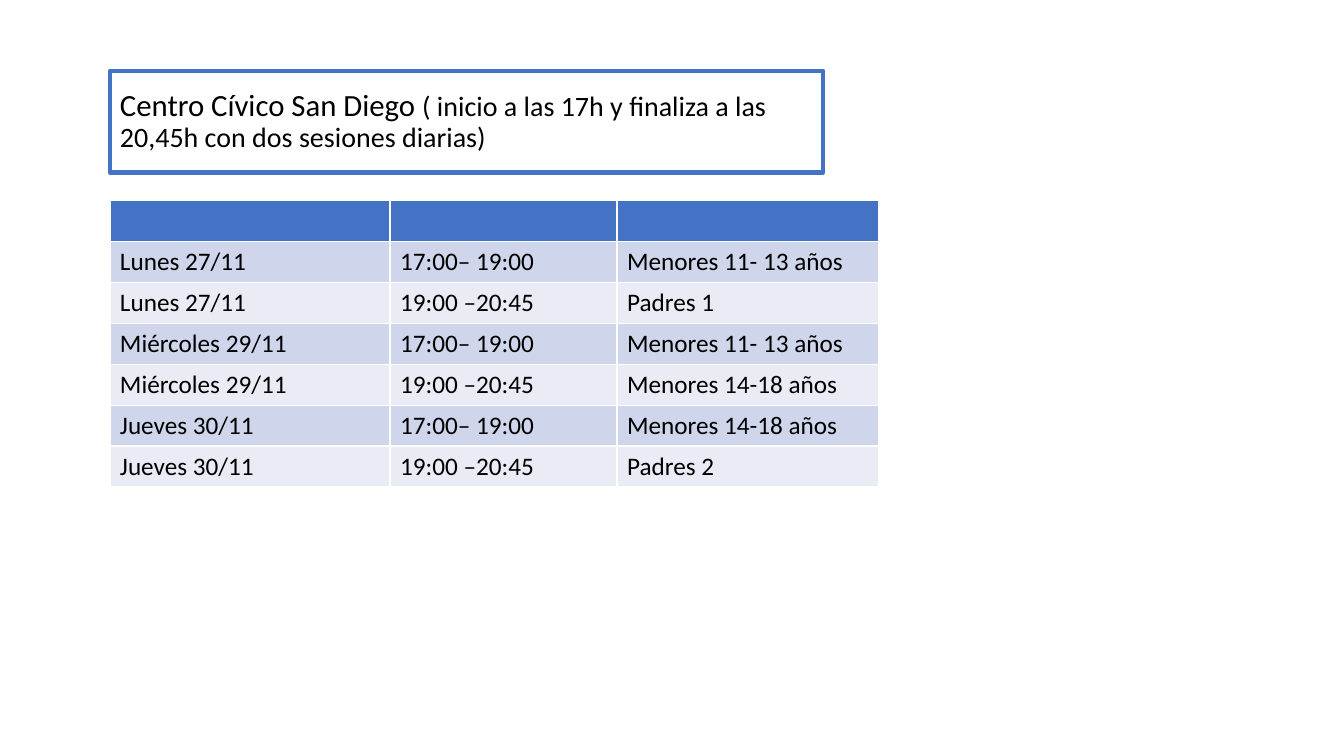
import pptx
import pptx.dml.color
import pptx.enum.text
import pptx.util

Cm = pptx.util.Cm
COLORS = {
    "blue": "4472C4",
    "white": "FFFFFF",
    "black": "000000",
    "odd band": "CFD5EA",
    "even band": "E9EBF5",
}


def color(name):
    return pptx.dml.color.RGBColor.from_string(COLORS[name])


def add_text(paragraph, text, size=18, font="Calibri", text_color="black"):
    run = paragraph.add_run()
    run.text = text
    run.font.size = pptx.util.Pt(size)
    run.font.name = font
    run.font.bold = False
    run.font.color.rgb = color(text_color)


presentation = pptx.Presentation()
presentation.slide_width = Cm(33.87)
presentation.slide_height = Cm(19.05)
slide = presentation.slides.add_slide(presentation.slide_layouts[5])

title = slide.shapes.title
title.left, title.top, title.width, title.height = Cm(2.77), Cm(1.78), Cm(17.98), Cm(2.57)
title.fill.solid()
title.fill.fore_color.rgb = color("white")
title.line.color.rgb = color("blue")
title.line.width = pptx.util.Pt(3)
title.text_frame.word_wrap = True
title.text_frame.auto_size = pptx.enum.text.MSO_AUTO_SIZE.NONE
title.text_frame.vertical_anchor = pptx.enum.text.MSO_ANCHOR.MIDDLE
heading = title.text_frame.paragraphs[0]
heading.alignment = pptx.enum.text.PP_ALIGN.LEFT
heading.line_spacing = 0.9
add_text(heading, "Centro Cívico San Diego ", size=22)
add_text(heading, "( inicio a las 17h y finaliza a las 20,45h con dos sesiones diarias)", size=20)

early, late = "17:00– 19:00", "19:00 –20:45"
sessions = [
    ("", "", ""),
    ("Lunes 27/11", early, "Menores 11- 13 años"),
    ("Lunes 27/11", late, "Padres 1"),
    ("Miércoles 29/11", early, "Menores 11- 13 años"),
    ("Miércoles 29/11", late, "Menores 14-18 años"),
    ("Jueves 30/11", early, "Menores 14-18 años"),
    ("Jueves 30/11", late, "Padres 2"),
]
column_widths = [7.06, 5.72, 6.6]
row_height = 1.03
schedule = slide.shapes.add_table(
    len(sessions), len(column_widths), Cm(2.77), Cm(5.06),
    Cm(sum(column_widths)), Cm(row_height * len(sessions)),
).table
for column, width in zip(schedule.columns, column_widths):
    column.width = Cm(width)

for row_index, session in enumerate(sessions):
    schedule.rows[row_index].height = Cm(row_height)
    band = "blue" if row_index == 0 else "odd band" if row_index % 2 else "even band"
    for column_index, text in enumerate(session):
        cell = schedule.cell(row_index, column_index)
        cell.fill.solid()
        cell.fill.fore_color.rgb = color(band)
        if text:
            add_text(cell.text_frame.paragraphs[0], text)

presentation.save("out.pptx")
